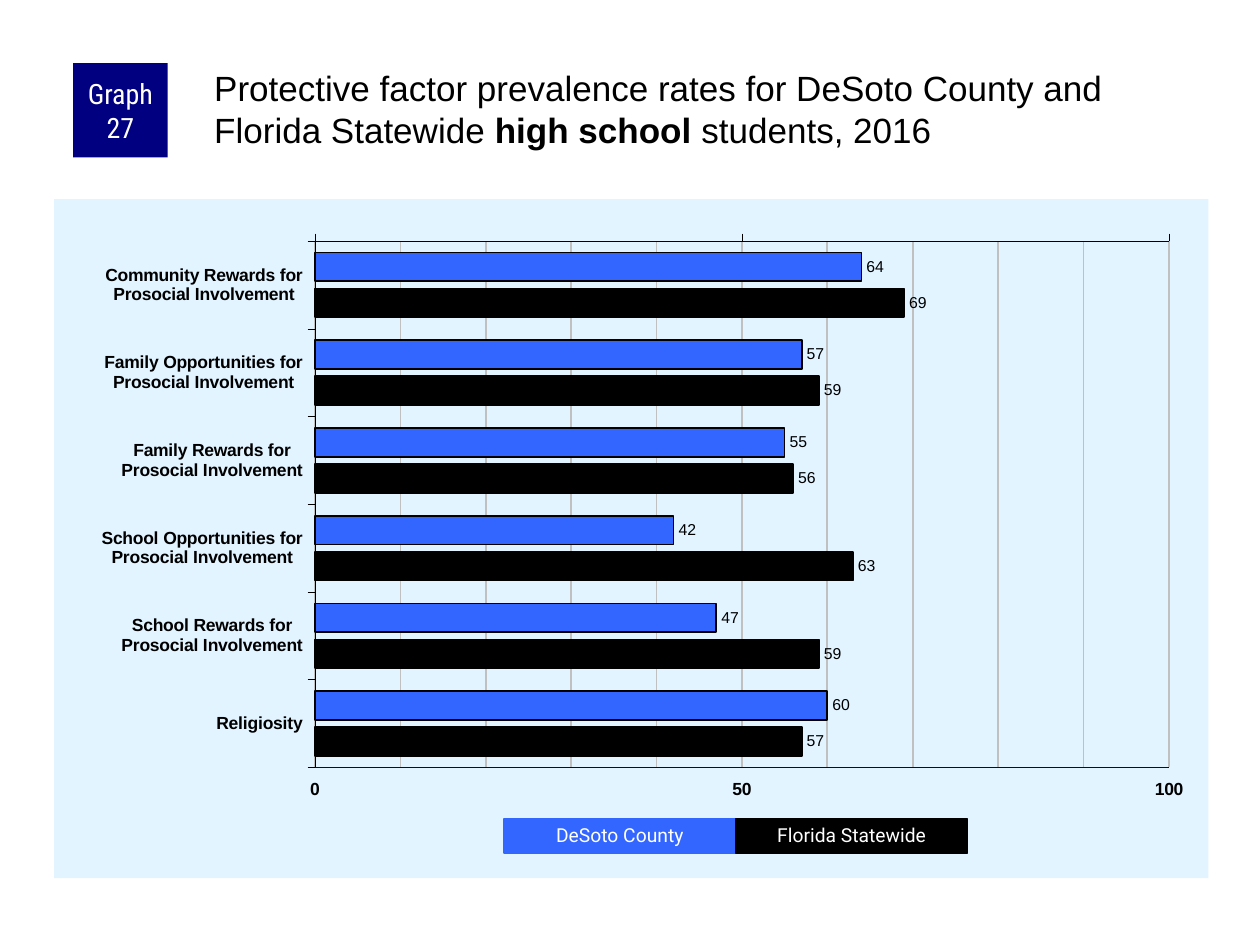
"""Build the slide comparing protective factor rates for a county and its state."""
from copy import deepcopy
from dataclasses import dataclass

from lxml import etree
from pptx import Presentation
from pptx.chart.data import CategoryChartData
from pptx.dml.color import RGBColor
from pptx.enum.chart import XL_CHART_TYPE, XL_LABEL_POSITION, XL_TICK_LABEL_POSITION, XL_TICK_MARK
from pptx.enum.shapes import MSO_CONNECTOR, MSO_SHAPE
from pptx.enum.text import MSO_ANCHOR, PP_ALIGN
from pptx.oxml import parse_xml
from pptx.oxml.ns import nsdecls, qn
from pptx.util import Inches, Pt

BAR_CLUSTERED = XL_CHART_TYPE.BAR_CLUSTERED
OUTSIDE_END = XL_LABEL_POSITION.OUTSIDE_END
LABELS_HIGH = XL_TICK_LABEL_POSITION.HIGH
TICK_OUTSIDE, TICK_NONE = XL_TICK_MARK.OUTSIDE, XL_TICK_MARK.NONE
RECTANGLE = MSO_SHAPE.RECTANGLE
STRAIGHT = MSO_CONNECTOR.STRAIGHT
MIDDLE, CENTER = MSO_ANCHOR.MIDDLE, PP_ALIGN.CENTER


@dataclass(frozen=True)
class Theme:
    navy: str = "000080"
    blue: str = "3366FF"
    black: str = "000000"
    white: str = "FFFFFF"
    panel: str = "E1F4FF"
    grid: str = "C0C0C0"
    body_font: str = "Arial"
    legend_font: str = "Roboto"
    badge_font: str = "Roboto Condensed"
    title_size: float = 20
    badge_size: float = 16
    legend_size: float = 11
    axis_size: float = 10
    value_size: float = 9


@dataclass(frozen=True)
class Area:
    name: str
    color: str
    rates: tuple[int, ...]


@dataclass(frozen=True)
class Box:
    left: float
    top: float
    width: float
    height: float

    def lengths(self) -> tuple:
        return tuple(Inches(n) for n in (self.left, self.top, self.width, self.height))


THEME = Theme()
INVOLVEMENT = "Prosocial Involvement"
FACTORS = [f"{group} for\n{INVOLVEMENT}" for group in (
    "Community Rewards", "Family Opportunities", "Family Rewards",
    "School Opportunities", "School Rewards")] + ["Religiosity"]
AREAS = (
    Area("DeSoto County", THEME.blue, (64, 57, 55, 42, 47, 60)),
    Area("Florida Statewide", THEME.black, (69, 59, 56, 63, 59, 57)),
)
CHART_BOX = Box(0.43, 1.58, 9.16, 5.39)
PLOT = {"x": 0.226, "y": 0.062, "w": 0.74, "h": 0.775}
LEGEND_BOX = Box(4, 6.5, 1.84, 0.27)


def set_font(font, name: str, size: float, color: str, bold: bool = False) -> None:
    font.name, font.size, font.bold = name, Pt(size), bold
    font.color.rgb = RGBColor.from_string(color)


def set_line(line, color: str, width: float) -> None:
    line.color.rgb = RGBColor.from_string(color)
    line.width = Pt(width)


def add_label(slide, box: Box, text: str, fill: str, font: str, size: float):
    shape = slide.shapes.add_shape(RECTANGLE, *box.lengths())
    shape.shadow.inherit = False
    shape.fill.solid()
    shape.fill.fore_color.rgb = RGBColor.from_string(fill)
    shape.line.fill.background()
    frame = shape.text_frame
    frame.word_wrap = True
    frame.vertical_anchor = MIDDLE
    frame.margin_left = frame.margin_right = Inches(0.05)
    frame.margin_top = frame.margin_bottom = 0
    paragraph = frame.paragraphs[0]
    paragraph.text = text
    paragraph.alignment = CENTER
    set_font(paragraph.font, font, size, THEME.white)
    return shape


def add_title(slide) -> None:
    shape = slide.shapes.add_textbox(*Box(1.67, 0.5, 7.92, 0.83).lengths())
    frame = shape.text_frame
    frame.word_wrap = True
    frame.margin_left = frame.margin_top = Inches(0.03)
    frame.margin_right = frame.margin_bottom = 0
    for text, bold in (
        ("Protective factor prevalence rates for DeSoto County and Florida Statewide ", False),
        ("high school ", True),
        ("students, 2016", False),
    ):
        run = frame.paragraphs[0].add_run()
        run.text = text
        set_font(run.font, THEME.body_font, THEME.title_size, THEME.black, bold)


def style_panel(chart) -> None:
    chart_element = chart.element.find(qn("c:chart"))
    chart_element.addnext(parse_xml(
        f'<c:spPr {nsdecls("c", "a")}><a:solidFill><a:srgbClr val="{THEME.panel}"/>'
        "</a:solidFill><a:ln><a:noFill/></a:ln></c:spPr>"))
    plot_area = chart_element.find(qn("c:plotArea"))
    for layout in plot_area.findall(qn("c:layout")):
        plot_area.remove(layout)
    modes = '<c:layoutTarget val="inner"/><c:xMode val="edge"/><c:yMode val="edge"/>'
    sizes = "".join(f'<c:{side} val="{value}"/>' for side, value in PLOT.items())
    plot_area.insert(0, parse_xml(
        f'<c:layout {nsdecls("c")}><c:manualLayout>{modes}{sizes}</c:manualLayout></c:layout>'))


def style_axes(chart) -> None:
    for axis in (chart.category_axis, chart.value_axis):
        axis.major_tick_mark, axis.minor_tick_mark = TICK_OUTSIDE, TICK_NONE
        set_line(axis.format.line, THEME.black, 0.25)
        set_font(axis.tick_labels.font, THEME.body_font, THEME.axis_size, THEME.black, True)
    chart.category_axis.reverse_order = True
    axis = chart.value_axis
    axis.tick_label_position = LABELS_HIGH
    axis.minimum_scale, axis.maximum_scale, axis.major_unit = 0, 100, 50
    axis.has_major_gridlines = axis.has_minor_gridlines = True
    set_line(axis.major_gridlines.format.line, THEME.grid, 1)
    value_axis = chart.element.find(".//" + qn("c:valAx"))
    major_style = value_axis.find(qn("c:majorGridlines")).find(qn("c:spPr"))
    value_axis.find(qn("c:minorGridlines")).append(deepcopy(major_style))
    minor_unit = parse_xml(f'<c:minorUnit {nsdecls("c")} val="10"/>')
    value_axis.find(qn("c:majorUnit")).addnext(minor_unit)


def add_rates_chart(slide) -> None:
    data = CategoryChartData()
    data.categories = FACTORS
    for area in AREAS:
        data.add_series(area.name, area.rates)
    chart = slide.shapes.add_chart(BAR_CLUSTERED, *CHART_BOX.lengths(), data).chart
    chart.has_title = chart.has_legend = False
    set_font(chart.font, THEME.body_font, THEME.axis_size, THEME.black)
    style_panel(chart)
    style_axes(chart)
    plot = chart.plots[0]
    plot.gap_width, plot.overlap, plot.vary_by_categories = 80, -25, False
    for series, area in zip(plot.series, AREAS):
        series.format.fill.solid()
        series.format.fill.fore_color.rgb = RGBColor.from_string(area.color)
        set_line(series.format.line, THEME.black, 1)
        labels = series.data_labels
        labels.show_value, labels.position = True, OUTSIDE_END
        set_font(labels.font, THEME.body_font, THEME.value_size, THEME.black)


def add_baseline(slide) -> None:
    left = CHART_BOX.left + PLOT["x"] * CHART_BOX.width
    right = left + PLOT["w"] * CHART_BOX.width
    bottom = CHART_BOX.top + (PLOT["y"] + PLOT["h"]) * CHART_BOX.height
    baseline = slide.shapes.add_connector(
        STRAIGHT, Inches(left), Inches(bottom), Inches(right), Inches(bottom))
    set_line(baseline.line, THEME.navy, 1)
    etree.SubElement(baseline.element.spPr, qn("a:effectLst"))


def add_legend(slide) -> None:
    for index, area in enumerate(AREAS):
        box = Box(LEGEND_BOX.left + index * LEGEND_BOX.width, LEGEND_BOX.top,
                  LEGEND_BOX.width, LEGEND_BOX.height)
        shape = add_label(slide, box, area.name, area.color, THEME.legend_font, THEME.legend_size)
        set_line(shape.line, area.color, 0.75)
        shape.text_frame.paragraphs[0].line_spacing = 0.9


def main() -> None:
    presentation = Presentation()
    presentation.slide_width, presentation.slide_height = Inches(10), Inches(7.5)
    slide = presentation.slides.add_slide(presentation.slide_layouts[6])
    add_rates_chart(slide)
    add_baseline(slide)
    add_label(slide, Box(0.58, 0.5, 0.75, 0.75), "Graph 27",
              THEME.navy, THEME.badge_font, THEME.badge_size)
    add_title(slide)
    add_legend(slide)
    presentation.save("out.pptx")


if __name__ == "__main__":
    main()
